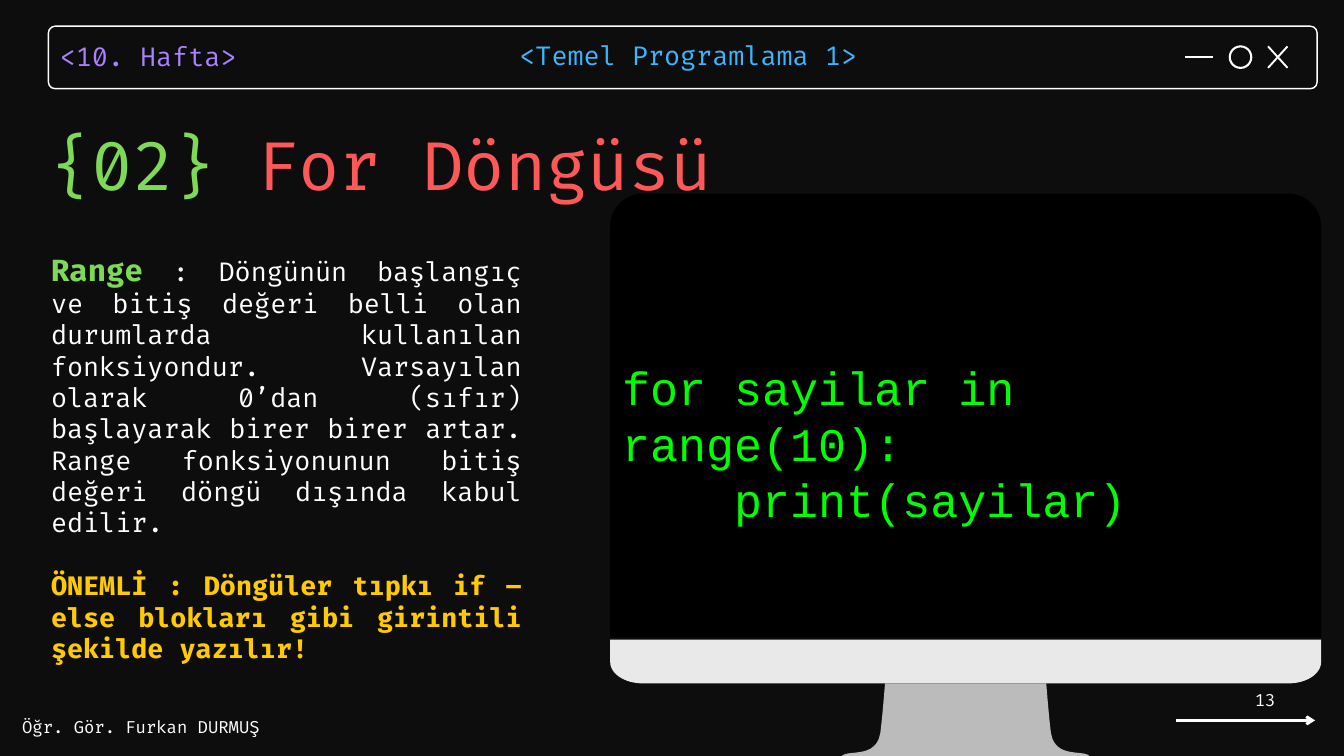
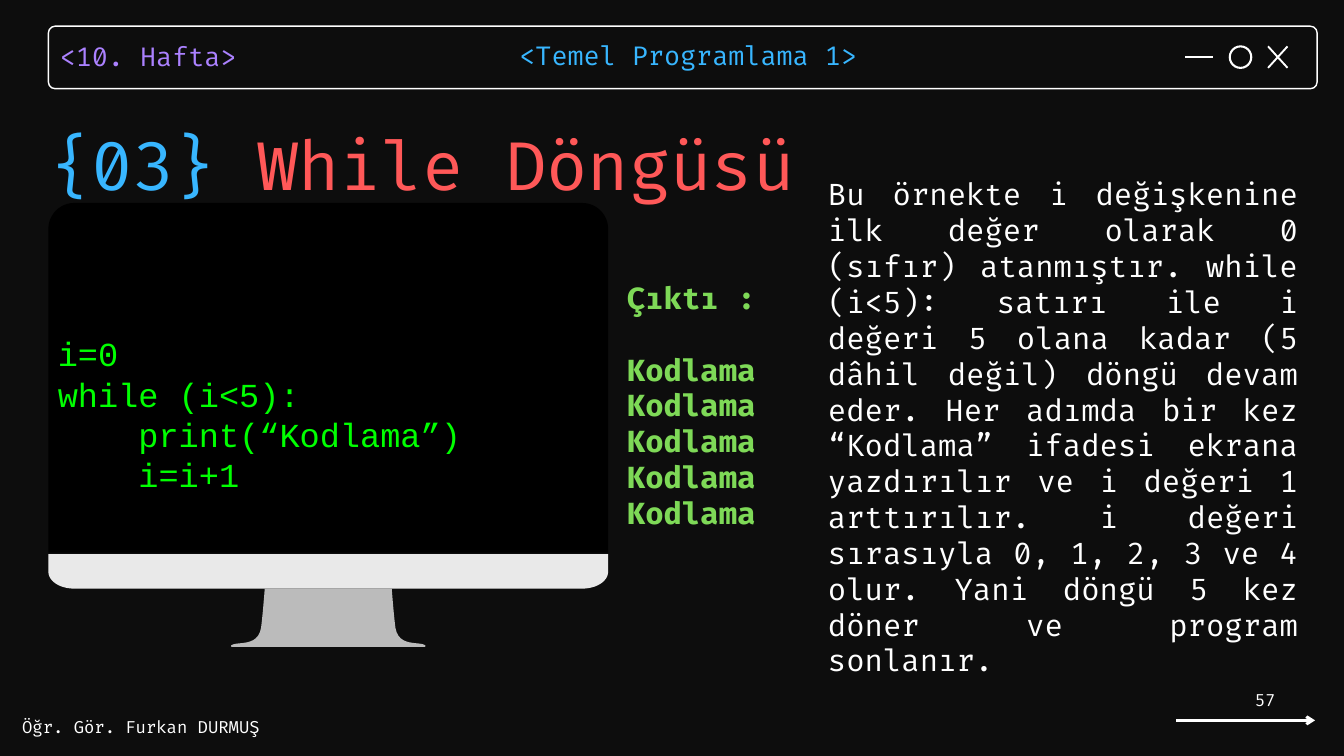
import pptx
import pptx.dml.color
import pptx.enum.shapes
import pptx.enum.text
import pptx.oxml.ns
import pptx.util
from lxml import etree

Inches, Pt = pptx.util.Inches, pptx.util.Pt
SHAPE = pptx.enum.shapes.MSO_SHAPE
ALIGN = pptx.enum.text.PP_ALIGN
ANCHOR = pptx.enum.text.MSO_ANCHOR
qn = pptx.oxml.ns.qn

COLORS = {
    "background": "0D0D0D", "white": "FFFFFF", "black": "000000",
    "purple": "AB81FF", "blue": "38B6FF", "green": "7ED957",
    "red": "FF5858", "yellow": "FFCA04", "code": "00FF00",
    "chin": "E9E9E9", "stand": "BBBBBB",
}
FONT, CODE_FONT = "Fira Code", "Courier New"

# Left halves of the monitor parts, in inches on a monitor 10.58 wide:
# pairs are corners, sextets are cubic curves
MONITOR_WIDTH = 10.58
CHIN = [(0, 6.64), (0, 6.97), (0, 7.15, 0.22, 7.29, 0.49, 7.29)]
STAND = [(4.09, 7.29), (4.09, 7.29, 4.05, 7.81, 4.02, 8.03),
         (3.96, 8.4, 3.57, 8.28, 3.46, 8.36),
         (3.45, 8.37, 3.45, 8.39, 3.47, 8.39)]


def rgb(name):
    return pptx.dml.color.RGBColor.from_string(COLORS[name])


# Text
def write_text(shape, paragraphs, size=28, color="white", bold=False, font=FONT,
               align=ALIGN.LEFT, anchor=ANCHOR.TOP, line_pt=None, gap=0, inset=0):
    """Each paragraph is a string or a list of (text, overrides) runs.

    gap is the space, in points, between the first and second paragraphs.
    """
    tf = shape.text_frame
    tf.word_wrap = True
    tf.auto_size = pptx.enum.text.MSO_AUTO_SIZE.NONE
    tf.vertical_anchor = anchor
    tf.margin_left = tf.margin_right = Inches(inset)
    tf.margin_top = tf.margin_bottom = Inches(inset / 2)
    for i, runs in enumerate(paragraphs):
        p = tf.add_paragraph() if i else tf.paragraphs[0]
        p.alignment = align
        p.space_before = Pt(gap if i == 1 else 0)
        if line_pt:
            p.line_spacing = Pt(line_pt)
        for text, own in [(runs, {})] if isinstance(runs, str) else runs:
            r = p.add_run()
            r.text = text
            r.font.name = font
            r.font.size = Pt(own.get("size", size))
            r.font.bold = own.get("bold", bold)
            r.font.color.rgb = rgb(own.get("color", color))


def add_text(s, x, y, w, h, paragraphs, **fmt):
    box = s.shapes.add_textbox(Inches(x), Inches(y), Inches(w), Inches(h))
    write_text(box, paragraphs, **fmt)


def place(shape, x, y, w, h):
    shape.left, shape.top = Inches(x), Inches(y)
    shape.width, shape.height = Inches(w), Inches(h)


def set_title(s, number, color, text):
    place(s.shapes.title, 0.75, 1.61, 19.25, 1.4)
    runs = [(f"{{{number}}} ", {"color": color}), (text, {})]
    write_text(s.shapes.title, [runs], size=72, color="red", line_pt=102.6)


def set_body(s, x, y, w, h, paragraphs, **fmt):
    body = s.placeholders[1]
    place(body, x, y, w, h)
    write_text(body, paragraphs, align=ALIGN.JUSTIFY, **fmt)
    for p in body.text_frame.paragraphs:
        pPr = p._p.get_or_add_pPr()
        pPr.set("marL", "0")
        pPr.set("indent", "0")
        etree.SubElement(pPr, qn("a:buNone"))


# Shapes
def style(shape, fill=None, line=None, width=1):
    shape.shadow.inherit = False
    if fill:
        shape.fill.solid()
        shape.fill.fore_color.rgb = rgb(fill)
    else:
        shape.fill.background()
    if line:
        shape.line.color.rgb = rgb(line)
        shape.line.width = Pt(width)
    else:
        shape.line.fill.background()


def add_shape(s, kind, x, y, w, h, radius=None, **look):
    shape = s.shapes.add_shape(kind, Inches(x), Inches(y), Inches(w), Inches(h))
    if radius:
        shape.adjustments[0] = radius / min(w, h)
    style(shape, **look)


def add_line(s, x1, y1, x2, y2, width=2, arrow=False):
    line = s.shapes.add_connector(pptx.enum.shapes.MSO_CONNECTOR.STRAIGHT,
                                  Inches(x1), Inches(y1), Inches(x2), Inches(y2))
    line.line.color.rgb = rgb("white")
    line.line.width = Pt(width)
    spPr = line._element.spPr
    if arrow:
        etree.SubElement(spPr.find(qn("a:ln")), qn("a:tailEnd"), type="arrow")
    etree.SubElement(spPr, qn("a:effectLst"))


def trace(steps, pieces=12):
    """Turn corners and cubic curves into a list of points."""
    points = []
    for step in steps:
        if len(step) == 2:
            points.append(step)
            continue
        nodes = [points[-1], step[:2], step[2:4], step[4:]]
        for i in range(1, pieces + 1):
            t = i / pieces
            weights = ((1 - t) ** 3, 3 * t * (1 - t) ** 2, 3 * t * t * (1 - t), t ** 3)
            points.append(tuple(sum(k * n[axis] for k, n in zip(weights, nodes))
                                for axis in (0, 1)))
    return points


def add_symmetric(s, half, x, y, scale, fill):
    left = trace(half)
    right = [(MONITOR_WIDTH - px, py) for px, py in reversed(left)]
    points = [(Inches(x + px * scale), Inches(y + py * scale)) for px, py in left + right]
    builder = s.shapes.build_freeform(*points[0])
    builder.add_line_segments(points[1:], close=True)
    style(builder.convert_to_shape(), fill=fill)


def add_monitor(s, x, y, width):
    k = width / MONITOR_WIDTH
    add_shape(s, SHAPE.ROUND_2_SAME_RECTANGLE, x, y, width, 6.61 * k,
              radius=0.49 * k, fill="black")
    add_symmetric(s, CHIN, x, y, k, "chin")
    add_symmetric(s, STAND, x, y, k, "stand")
    add_shape(s, SHAPE.RECTANGLE, x + 0.46 * k, y + 0.36 * k, 9.73 * k, 6.1 * k,
              fill="black", line="black", width=2)


# Window bar, footer and page number
def add_frame(s, page):
    add_line(s, 17.5, 10.72, 19.57, 10.72, width=3, arrow=True)
    add_shape(s, SHAPE.ROUNDED_RECTANGLE, 0.72, 0.39, 18.88, 0.93, radius=0.1,
              line="white", width=1.5)
    add_line(s, 18.87, 0.69, 19.16, 1.01)
    add_line(s, 19.16, 0.69, 18.87, 1.01)
    add_line(s, 17.64, 0.85, 18.05, 0.85)
    add_shape(s, SHAPE.OVAL, 18.3, 0.69, 0.32, 0.32, line="white", width=2.25)
    add_text(s, 0.89, 0.52, 3.4, 0.53, ["<10. Hafta>"], color="purple", line_pt=39.2)
    add_text(s, 7.73, 0.51, 5.29, 0.53, ["<Temel Programlama 1>"],
             color="blue", line_pt=39.2)
    add_text(s, 0.33, 10.67, 3.67, 0.3, ["Öğr. Gör. Furkan DURMUŞ"], size=18)
    add_text(s, 16.75, 10.21, 2.33, 0.4, [page], size=18, align=ALIGN.RIGHT,
             anchor=ANCHOR.MIDDLE, inset=0.1)


def add_slide(prs, page, number, color, title):
    s = prs.slides.add_slide(prs.slide_layouts[1])
    set_title(s, number, color, title)
    add_frame(s, page)
    return s


def build_for_slide(prs):
    s = add_slide(prs, "13", "02", "green", "For Döngüsü")
    set_body(s, 0.76, 3.74, 7, 6.19, [
        [("Range", {"size": 32, "color": "green", "bold": True}),
         (" : Döngünün başlangıç ve bitiş değeri belli olan durumlarda kullanılan "
          "fonksiyondur. Varsayılan olarak 0’dan (sıfır) başlayarak birer birer artar. "
          "Range fonksiyonunun bitiş değeri döngü dışında kabul edilir.", {})],
        [("ÖNEMLİ : Döngüler tıpkı if – else blokları gibi girintili şekilde yazılır!",
          {"color": "yellow", "bold": True})],
    ], gap=33.6)
    add_monitor(s, 9.08, 2.88, 10.58)
    add_text(s, 9.26, 5.34, 10, 2.5,
             ["for sayilar in range(10):", "    print(sayilar)"],
             size=50, color="code", font=CODE_FONT)


def build_while_slide(prs):
    s = add_slide(prs, "57", "03", "blue", "While Döngüsü")
    add_monitor(s, 0.72, 3.02, 8.33)
    add_text(s, 0.86, 4.96, 7.87, 2.42,
             ["i=0", "while (i<5):", "    print(“Kodlama”)", "    i=i+1"],
             size=36, color="code", font=CODE_FONT)
    add_text(s, 9.33, 4.16, 7, 3.77, ["Çıktı :"] + ["Kodlama"] * 5, size=32,
             color="green", bold=True, align=ALIGN.JUSTIFY, gap=38.4)
    set_body(s, 12.32, 2.62, 7, 7.5, [
        "Bu örnekte i değişkenine ilk değer olarak 0 (sıfır) atanmıştır. while (i<5): "
        "satırı ile i değeri 5 olana kadar (5 dâhil değil) döngü devam eder. Her adımda "
        "bir kez “Kodlama” ifadesi ekrana yazdırılır ve i değeri 1 arttırılır. i değeri "
        "sırasıyla 0, 1, 2, 3 ve 4 olur. Yani döngü 5 kez döner ve program sonlanır.",
    ], size=32)


def main():
    prs = pptx.Presentation()
    prs.slide_width, prs.slide_height = Inches(20), Inches(11.25)
    fill = prs.slide_master.background.fill
    fill.solid()
    fill.fore_color.rgb = rgb("background")
    build_for_slide(prs)
    build_while_slide(prs)
    prs.save("out.pptx")


if __name__ == "__main__":
    main()
